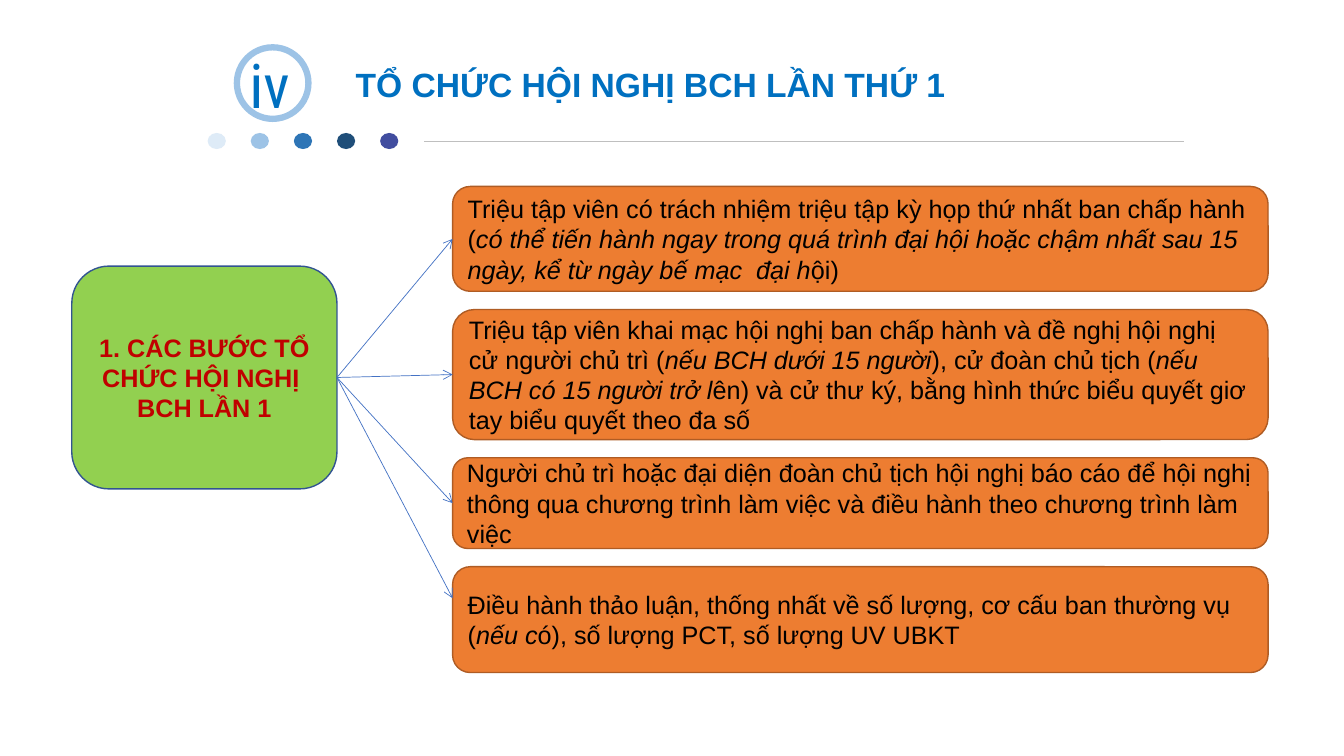
from dataclasses import dataclass

from lxml import etree
from pptx import Presentation
from pptx import util as u
from pptx.dml.color import RGBColor
from pptx.enum import shapes, text
from pptx.oxml import ns


@dataclass(frozen=True)
class Theme:
    font: str = "Arial"
    numeral_font: str = "Roboto Condensed"
    title_size: float = 24
    body_size: float = 18
    numeral_size: float = 44
    blue: str = "0070C0"
    ring: str = "9DC3E6"
    divider: str = "BFBFBF"
    arrow: str = "4472C4"
    topic_fill: str = "92D050"
    topic_line: str = "325491"
    topic_text: str = "C00000"
    step_fill: str = "ED7D31"
    step_line: str = "AF5C24"
    step_text: str = "000000"
    dots: tuple = ("DEEBF7", "9DC3E6", "2E75B6", "1F4E79", "414D9F")


THEME = Theme()

STEPS = [
    (74.9, [["Triệu tập viên có trách nhiệm triệu tập kỳ họp thứ nhất ban chấp hành"],
            ["(", "có thể tiến hành ngay trong quá trình đại hội hoặc chậm nhất sau 15 ngày, "
             "kể từ ngày bế mạc  đại h", "ội)"]]),
    (92.9, [["Triệu tập viên khai mạc hội nghị ban chấp hành và đề nghị hội nghị cử người chủ trì (",
             "nếu BCH dưới 15 người", "), cử đoàn chủ tịch (", "nếu BCH có 15 người trở l",
             "ên) và cử thư ký, bằng hình thức biểu quyết giơ tay biểu quyết theo đa số"]]),
    (64.8, [["Người chủ trì hoặc đại diện đoàn chủ tịch hội nghị báo cáo để hội nghị thông qua "
             "chương trình làm việc và điều hành theo chương trình làm việc"]]),
    (75.6, [["Điều hành thảo luận, thống nhất về số lượng, cơ cấu ban thường vụ (", "nếu c",
             "ó), số lượng PCT, số lượng UV UBKT"]]),
]


def points(*lengths):
    return [u.Pt(length) for length in lengths]


def color(code):
    return RGBColor.from_string(code)


def write(shape, paragraphs, size, ink, font=THEME.font, bold=False,
          align=text.PP_ALIGN.LEFT, anchor=text.MSO_ANCHOR.MIDDLE):
    frame = shape.text_frame
    frame.word_wrap = True
    frame.auto_size = text.MSO_AUTO_SIZE.NONE
    frame.vertical_anchor = anchor
    for index, spans in enumerate(paragraphs):
        para = frame.add_paragraph() if index else frame.paragraphs[0]
        para.alignment = align
        para.font.name, para.font.size, para.font.bold = font, u.Pt(size), bold
        para.font.color.rgb = color(ink)
        for position, words in enumerate(spans):
            span = para.add_run()
            span.text = words
            if position % 2:
                span.font.italic = True


def draw_shape(page, kind, box, fill=None, line=None, weight=1):
    shape = page.shapes.add_shape(kind, *points(*box))
    shape.shadow.inherit = False
    if fill:
        shape.fill.solid()
        shape.fill.fore_color.rgb = color(fill)
    else:
        shape.fill.background()
    if line:
        shape.line.color.rgb = color(line)
        shape.line.width = u.Pt(weight)
    else:
        shape.line.fill.background()
    return shape


def draw_line(page, start, end, ink, arrow=False):
    line = page.shapes.add_connector(shapes.MSO_CONNECTOR.STRAIGHT, *points(*start, *end))
    line.line.color.rgb = color(ink)
    line.line.width = u.Pt(0.5)
    properties = line._element.spPr
    if arrow:
        etree.SubElement(properties.find(ns.qn("a:ln")), ns.qn("a:tailEnd"), type="arrow")
    etree.SubElement(properties, ns.qn("a:effectLst"))
    return line


def draw_header(page, box):
    left, top, width, height = box
    numeral = page.shapes.add_textbox(*points(left, top, 88.6, 60.5))
    write(numeral, [["iv"]], THEME.numeral_size, THEME.blue, THEME.numeral_font,
          align=text.PP_ALIGN.CENTER, anchor=text.MSO_ANCHOR.TOP)
    draw_shape(page, shapes.MSO_SHAPE.OVAL, (left + 20.9, top + 3.6, 51.1, 51.1),
               line=THEME.ring, weight=4.5)

    title = page.shapes.title
    title.left, title.top, title.width, title.height = points(left + 98.6, top + 11.5, 625, 36)
    write(title, [["TỔ CHỨC HỘI NGHỊ BCH LẦN THỨ 1"]], THEME.title_size, THEME.blue, bold=True)

    dot_width, dot_height, pitch = 13, 11.5, 30.8
    for index, fill in enumerate(THEME.dots):
        draw_shape(page, shapes.MSO_SHAPE.OVAL,
                   (left + index * pitch, top + height - dot_height, dot_width, dot_height), fill)
    middle = top + height - dot_height / 2
    draw_line(page, (left + 154.8, middle), (left + width, middle), THEME.divider)


def draw_topic(page, box):
    topic = draw_shape(page, shapes.MSO_SHAPE.ROUNDED_RECTANGLE, box,
                       THEME.topic_fill, THEME.topic_line)
    write(topic, [["1. CÁC BƯỚC TỔ CHỨC HỘI NGHỊ "], ["BCH LẦN 1"]], THEME.body_size,
          THEME.topic_text, bold=True, align=text.PP_ALIGN.CENTER)
    return topic


def draw_steps(page, box):
    left, top, width, height = box
    gap = (height - sum(step_height for step_height, _ in STEPS)) / (len(STEPS) - 1)
    steps = []
    for step_height, paragraphs in STEPS:
        step = draw_shape(page, shapes.MSO_SHAPE.ROUNDED_RECTANGLE,
                          (left, top, width, step_height), THEME.step_fill, THEME.step_line)
        write(step, paragraphs, THEME.body_size, THEME.step_text)
        steps.append(step)
        top += step_height + gap
    return steps


def draw_arrows(page, topic, steps):
    start = (topic.left.pt + topic.width.pt, topic.top.pt + topic.height.pt / 2)
    for step in steps:
        last = step is steps[-1]
        drop = 22.5 if last else step.height.pt / 2
        arrow = draw_line(page, start, (step.left.pt, step.top.pt + drop), THEME.arrow, arrow=True)
        arrow.begin_connect(topic, 3)
        if not last:
            arrow.end_connect(step, 1)


def main():
    deck = Presentation()
    deck.slide_width, deck.slide_height = points(960, 540)
    page = deck.slides.add_slide(deck.slide_layouts[5])
    topic = draw_topic(page, (51.3, 190.1, 189.4, 159.1))
    steps = draw_steps(page, (323.3, 133.2, 582.5, 347.2))
    draw_arrows(page, topic, steps)
    draw_header(page, (148.3, 30.2, 697.7, 76.3))
    deck.save("out.pptx")


if __name__ == "__main__":
    main()
